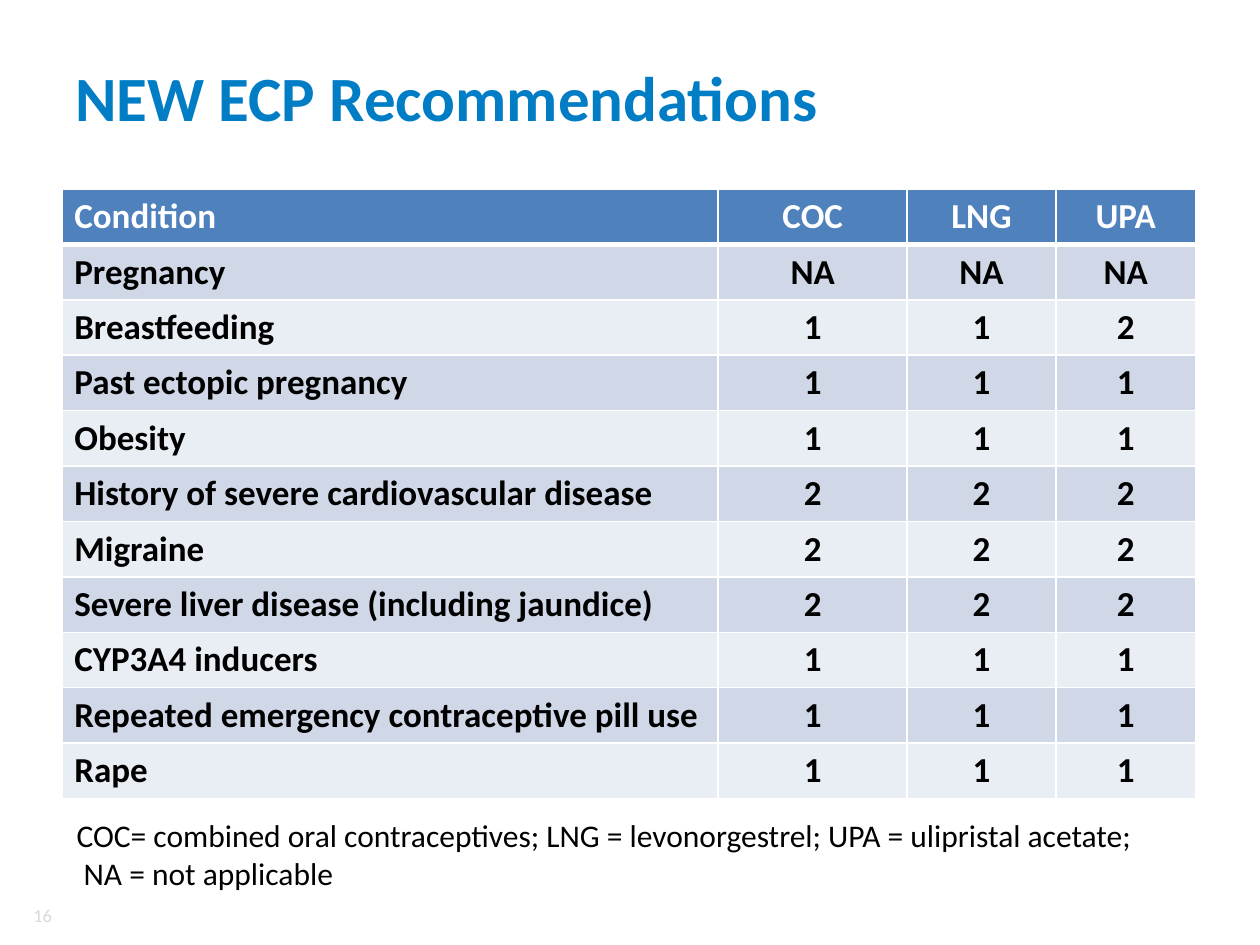
from dataclasses import dataclass

from lxml import etree
from pptx import Presentation
from pptx import util as u
from pptx.dml.color import RGBColor
from pptx.enum import text
from pptx.oxml import ns

FONT = "Calibri"
WHITE, BLACK = "FFFFFF", "000000"
HEADER_FILL, BANDS = "4F81BD", ("D0D8E8", "E9EDF4")
COL_WIDTHS = (5.21, 1.5, 1.18, 1.11)
ROW_HEIGHT = 0.44
LEFT, CENTER, RIGHT = text.PP_ALIGN.LEFT, text.PP_ALIGN.CENTER, text.PP_ALIGN.RIGHT
MIDDLE, TOP = text.MSO_ANCHOR.MIDDLE, text.MSO_ANCHOR.TOP


@dataclass
class Label:
    box: tuple[float, float, float, float]
    lines: tuple[str, ...]
    size: float
    color: str
    bold: bool = False
    align: text.PP_ALIGN = LEFT
    anchor: text.MSO_ANCHOR = TOP


@dataclass
class Recommendation:
    condition: str
    coc: str
    lng: str
    upa: str

    def values(self) -> tuple[str, ...]:
        return self.condition, self.coc, self.lng, self.upa


LABELS = (
    Label((0.12, 7.14, 0.39, 0.24), ("16",), 10.5, "D9D9D9", align=RIGHT, anchor=MIDDLE),
    Label((0.5, 0.3, 9, 0.93), ("NEW ECP Recommendations",), 36, "007DC5",
          bold=True, anchor=MIDDLE),
    Label((0.51, 6.43, 9.13, 0.71),
          ("COC= combined oral contraceptives; LNG = levonorgestrel; UPA = ulipristal acetate;",
           " NA = not applicable"), 18, BLACK),
)

ROWS = (
    Recommendation("Condition", "COC", "LNG", "UPA"),
    Recommendation("Pregnancy", "NA", "NA", "NA"),
    Recommendation("Breastfeeding", "1", "1", "2"),
    Recommendation("Past ectopic pregnancy", "1", "1", "1"),
    Recommendation("Obesity", "1", "1", "1"),
    Recommendation("History of severe cardiovascular disease", "2", "2", "2"),
    Recommendation("Migraine", "2", "2", "2"),
    Recommendation("Severe liver disease (including jaundice)", "2", "2", "2"),
    Recommendation("CYP3A4 inducers", "1", "1", "1"),
    Recommendation("Repeated emergency contraceptive pill use", "1", "1", "1"),
    Recommendation("Rape", "1", "1", "1"),
)


def rgb(value: str) -> RGBColor:
    return RGBColor.from_string(value)


def write(p, content: str, size: float, color: str, bold: bool, align) -> None:
    p.alignment = align
    r = p.add_run()
    r.text = content
    for name, value in {"name": FONT, "size": u.Pt(size), "bold": bold}.items():
        setattr(r.font, name, value)
    r.font.color.rgb = rgb(color)


def add_label(s, label: Label) -> None:
    tf = s.shapes.add_textbox(*map(u.Inches, label.box)).text_frame
    for name, value in {"word_wrap": True, "vertical_anchor": label.anchor}.items():
        setattr(tf, name, value)
    for i, line in enumerate(label.lines):
        p = tf.add_paragraph() if i else tf.paragraphs[0]
        write(p, line, label.size, label.color, label.bold, label.align)


def set_borders(cell, widths: dict[str, float]) -> None:
    tc_pr = cell._tc.get_or_add_tcPr()
    for side, width in widths.items():
        ln = etree.SubElement(tc_pr, ns.qn(f"a:{side}"), w=str(u.Pt(width)))
        fill = etree.SubElement(ln, ns.qn("a:solidFill"))
        etree.SubElement(fill, ns.qn("a:srgbClr"), val=WHITE)


def add_recommendations(s) -> None:
    box = (0.49, 1.5, sum(COL_WIDTHS), ROW_HEIGHT * len(ROWS))
    table = s.shapes.add_table(len(ROWS), len(COL_WIDTHS), *map(u.Inches, box)).table
    for column, width in zip(table.columns, COL_WIDTHS):
        column.width = u.Inches(width)
    for i, row in enumerate(ROWS):
        table.rows[i].height = u.Inches(ROW_HEIGHT)
        fill = BANDS[(i - 1) % 2] if i else HEADER_FILL
        top, bottom = 3 if i == 1 else 1, 1 if i else 3
        for j, value in enumerate(row.values()):
            cell = table.cell(i, j)
            set_borders(cell, {"lnL": 1, "lnR": 1, "lnT": top, "lnB": bottom})
            cell.fill.solid()
            cell.fill.fore_color.rgb = rgb(fill)
            write(cell.text_frame.paragraphs[0], value, 20,
                  BLACK if i else WHITE, True, CENTER if j else LEFT)


def main() -> None:
    prs = Presentation()
    prs.slide_width, prs.slide_height = u.Inches(10), u.Inches(7.5)
    s = prs.slides.add_slide(prs.slide_layouts[6])
    number, title, abbreviations = LABELS
    add_label(s, number)
    add_label(s, title)
    add_recommendations(s)
    add_label(s, abbreviations)
    prs.save("out.pptx")


if __name__ == "__main__":
    main()
